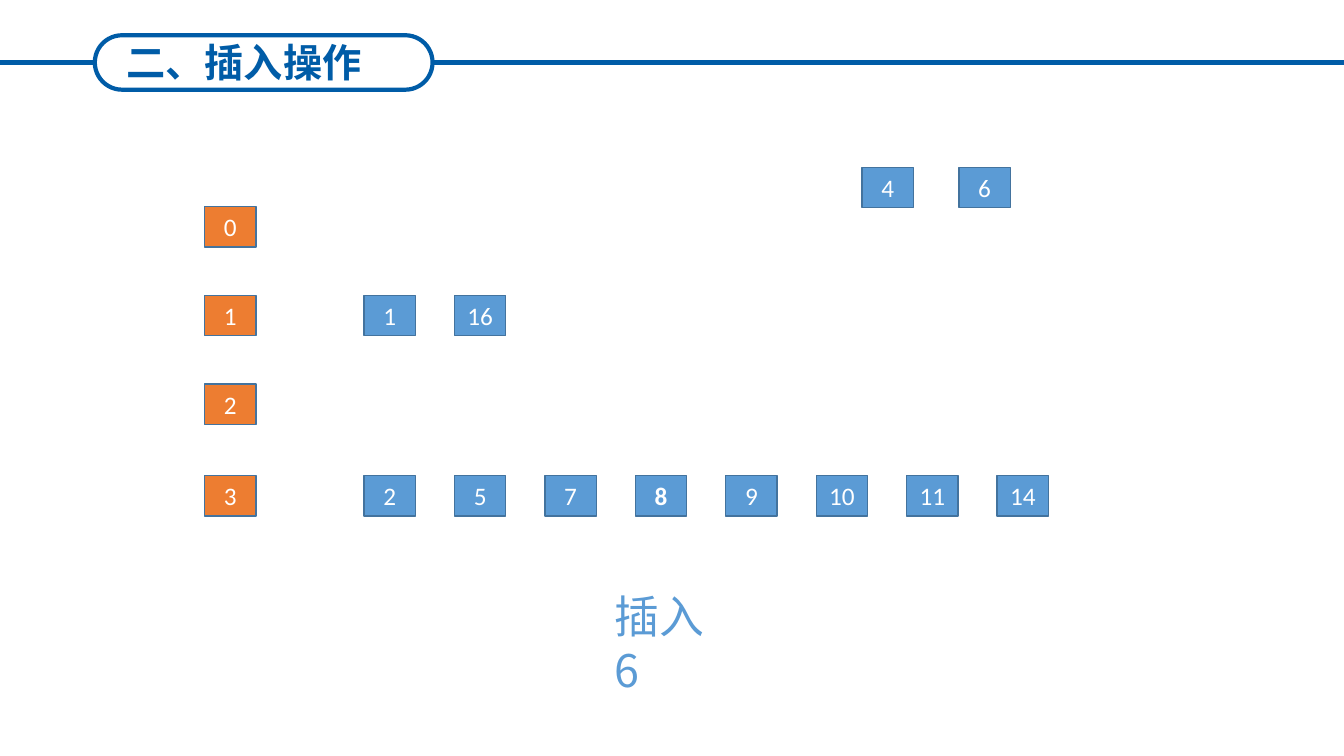
"""Build the slide that shows inserting 6 into an array of buckets."""
from lxml.etree import SubElement
from pptx import Presentation
from pptx.dml.color import RGBColor
from pptx.enum.shapes import MSO_CONNECTOR as Connector, MSO_SHAPE as Shape
from pptx.enum.text import MSO_ANCHOR as Anchor, MSO_AUTO_SIZE as AutoSize, PP_ALIGN as Align
from pptx.oxml.ns import qn
from pptx.util import Inches, Pt

NAVY, BLUE, ORANGE, EDGE, WHITE = "005CA7", "5B9BD5", "ED7D31", "43739E", "FFFFFF"
CHINESE = "Noto Sans CJK SC"


def color(value):
    return RGBColor.from_string(value)


def write(box, text, size=18, font="Calibri", fill=WHITE, bold=False,
          align=Align.CENTER, anchor=Anchor.MIDDLE):
    frame = box.text_frame
    frame.word_wrap = True
    frame.auto_size = AutoSize.NONE
    frame.vertical_anchor = anchor
    para = frame.paragraphs[0]
    para.alignment = align
    span = para.add_run()
    span.text = text
    span.font.size = Pt(size)
    span.font.bold = bold
    span.font.color.rgb = color(fill)
    span.font.name = font
    SubElement(span.font._element, qn("a:ea")).set("typeface", font)


deck = Presentation()
deck.slide_width, deck.slide_height = Inches(13.33), Inches(7.5)
page = deck.slides.add_slide(deck.slide_layouts[5])

title = page.shapes.title
title.left, title.top, title.width, title.height = [Inches(n) for n in (0.73, 0.33, 3.38, 0.57)]
write(title, "二、插入操作", size=28, font=CHINESE, fill=NAVY, bold=True)

pill = page.shapes.add_shape(Shape.ROUNDED_RECTANGLE, Inches(0.94), Inches(0.35), Inches(3.35), Inches(0.54))
pill.adjustments[0] = 0.5
pill.shadow.inherit = False
pill.fill.background()
pill.line.color.rgb = color(NAVY)
pill.line.width = Pt(3)

for edge, side in ((0, 1), (13.33, 3)):
    rule = page.shapes.add_connector(Connector.STRAIGHT, Inches(edge), Inches(0.62), Inches(4), Inches(0.62))
    rule.end_connect(pill, side)
    rule.line.color.rgb = color(NAVY)
    rule.line.width = Pt(3)
    SubElement(rule._element.spPr, qn("a:effectLst"))

pitch = (9.89 - 3.61) / 7
buckets = [
    (2.05, []),
    (2.93, ["1", "16"]),
    (3.81, []),
    (4.72, ["2", "5", "7", "8", "9", "10", "11", "14"]),
]
cells = [("4", 8.55, 1.66, BLUE), ("6", 9.51, 1.66, BLUE)]
for index, (top, values) in enumerate(buckets):
    cells.append((str(index), 2.03, top, ORANGE))
    cells += [(value, 3.61 + column * pitch, top, BLUE) for column, value in enumerate(values)]

for value, left, top, fill in cells:
    cell = page.shapes.add_shape(Shape.RECTANGLE, Inches(left), Inches(top), Inches(0.51), Inches(0.4))
    cell.shadow.inherit = False
    cell.fill.solid()
    cell.fill.fore_color.rgb = color(fill)
    cell.line.color.rgb = color(EDGE)
    cell.line.width = Pt(1)
    write(cell, value, bold=value == "8")

caption = page.shapes.add_textbox(Inches(6), Inches(5.79), Inches(1.33), Inches(0.64))
write(caption, "插入6", size=32, font=CHINESE, fill=BLUE, align=Align.LEFT, anchor=Anchor.TOP)

deck.save("out.pptx")
